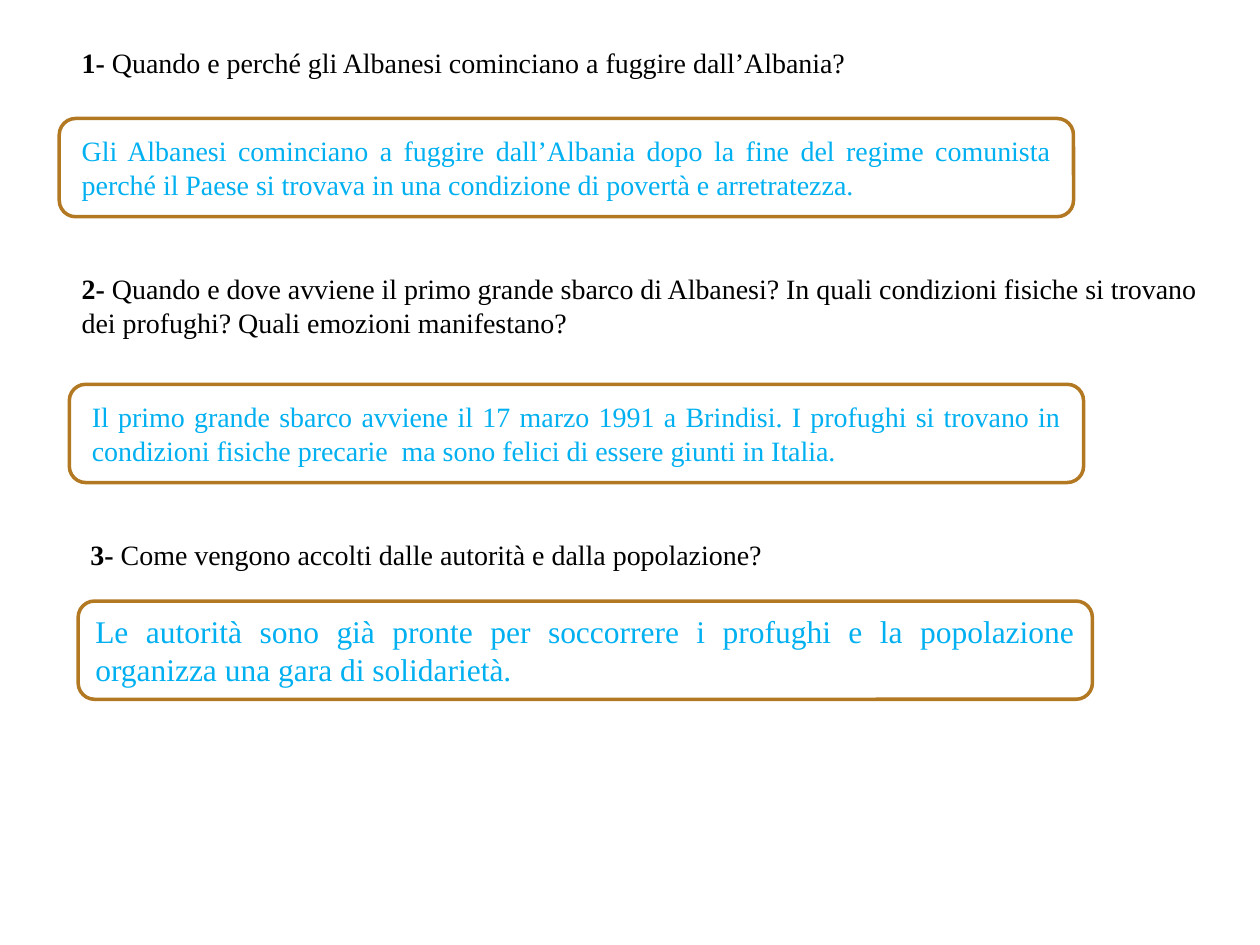
from pptx import Presentation
from pptx.dml.color import RGBColor
from pptx.enum.shapes import MSO_SHAPE
from pptx.enum.text import MSO_ANCHOR, MSO_AUTO_SIZE, PP_ALIGN
from pptx.util import Inches, Pt

COLORS = {"question": "000000", "answer": "00B0F0", "box": "FFFFFF", "border": "B27822"}
FONT = "Times New Roman"
BOX_WIDTH, BOX_HEIGHT = 8.05, 0.78
ANSWER_WIDTH, ANSWER_HEIGHT = 7.89, 0.64
QUESTION_WIDTH = 9.06

# number, text, left, top, height
QUESTIONS = [
    (1, "Quando e perché gli Albanesi cominciano a fuggire dall’Albania?", 0.55, 0.31, 0.37),
    (2, "Quando e dove avviene il primo grande sbarco di Albanesi? In quali condizioni "
        "fisiche si trovano dei profughi? Quali emozioni manifestano?", 0.55, 2.11, 0.64),
    (3, "Come vengono accolti dalle autorità e dalla popolazione?", 0.62, 4.22, 0.37),
]
# text, box left, box top
FRAMED_ANSWERS = [
    ("Gli Albanesi cominciano a fuggire dall’Albania dopo la fine del regime comunista "
     "perché il Paese si trovava in una condizione di povertà e arretratezza.", 0.47, 0.94),
    ("Il primo grande sbarco avviene il 17 marzo 1991 a Brindisi. I profughi si trovano in "
     "condizioni fisiche precarie  ma sono felici di essere giunti in Italia.", 0.55, 3.05),
]
LAST_ANSWER = ("Le autorità sono già pronte per soccorrere i profughi e la popolazione "
               "organizza una gara di solidarietà.")


def color(name):
    return RGBColor.from_string(COLORS[name])


def set_font(paragraph, size, color_name):
    paragraph.font.name = FONT
    paragraph.font.size = Pt(size)
    paragraph.font.color.rgb = color(color_name)


def add_text_box(slide, left, top, width, height):
    shape = slide.shapes.add_textbox(Inches(left), Inches(top), Inches(width), Inches(height))
    shape.text_frame.word_wrap = True
    shape.text_frame.auto_size = MSO_AUTO_SIZE.SHAPE_TO_FIT_TEXT
    return shape


def add_question(slide, number, text, left, top, height):
    shape = add_text_box(slide, left, top, QUESTION_WIDTH, height)
    paragraph = shape.text_frame.paragraphs[0]
    set_font(paragraph, 16, "question")
    number_run = paragraph.add_run()
    number_run.text = f"{number}- "
    number_run.font.bold = True
    paragraph.add_run().text = text


def add_answer_box(slide, left, top):
    shape = slide.shapes.add_shape(MSO_SHAPE.ROUNDED_RECTANGLE, Inches(left), Inches(top),
                                   Inches(BOX_WIDTH), Inches(BOX_HEIGHT))
    shape.shadow.inherit = False
    shape.fill.solid()
    shape.fill.fore_color.rgb = color("box")
    shape.line.color.rgb = color("border")
    shape.line.width = Pt(2)
    return shape


def write_answer(shape, text, size):
    shape.text_frame.word_wrap = True
    shape.text_frame.vertical_anchor = MSO_ANCHOR.MIDDLE
    paragraph = shape.text_frame.paragraphs[0]
    paragraph.text = text
    paragraph.alignment = PP_ALIGN.JUSTIFY
    set_font(paragraph, size, "answer")


def add_framed_answer(slide, text, left, top):
    """Add an answer box with a text box centred over it."""
    add_answer_box(slide, left, top)
    shape = add_text_box(slide, left + (BOX_WIDTH - ANSWER_WIDTH) / 2,
                         top + (BOX_HEIGHT - ANSWER_HEIGHT) / 2,
                         ANSWER_WIDTH, ANSWER_HEIGHT)
    write_answer(shape, text, 16)


def main():
    presentation = Presentation()
    presentation.slide_width = Inches(10)
    presentation.slide_height = Inches(7.5)
    slide = presentation.slides.add_slide(presentation.slide_layouts[6])
    for question in QUESTIONS:
        add_question(slide, *question)
    for answer in FRAMED_ANSWERS:
        add_framed_answer(slide, *answer)
    write_answer(add_answer_box(slide, 0.62, 4.77), LAST_ANSWER, 18)
    presentation.save("out.pptx")


if __name__ == "__main__":
    main()
